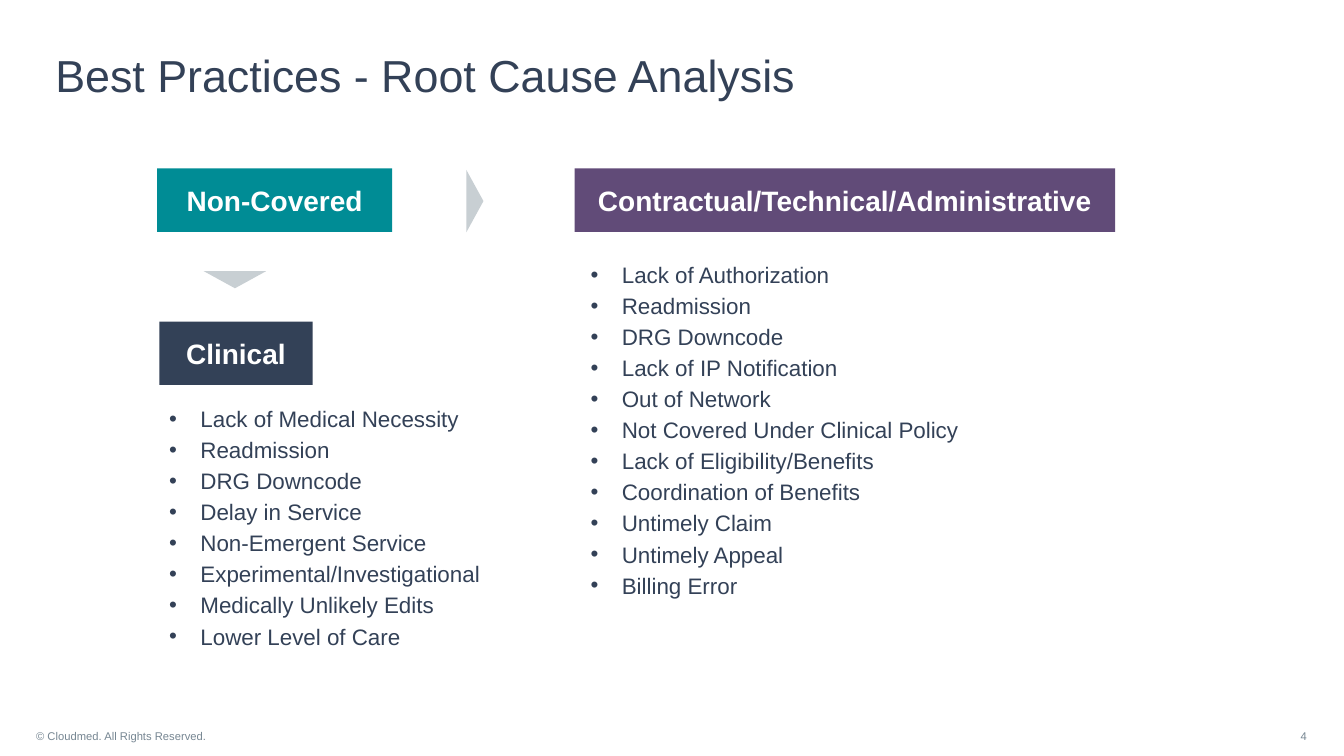
from dataclasses import dataclass

from lxml import etree
from pptx import Presentation
from pptx.dml.color import RGBColor
from pptx.enum.shapes import MSO_SHAPE
from pptx.enum.text import MSO_ANCHOR, PP_ALIGN
from pptx.oxml.ns import qn
from pptx.util import Inches, Pt

RECT, WEDGE = MSO_SHAPE.RECTANGLE, MSO_SHAPE.ISOSCELES_TRIANGLE
TOP, MIDDLE = MSO_ANCHOR.TOP, MSO_ANCHOR.MIDDLE
LEFT, CENTER, RIGHT = PP_ALIGN.LEFT, PP_ALIGN.CENTER, PP_ALIGN.RIGHT


@dataclass(frozen=True)
class Theme:
    font: str = "Arial"
    navy: str = "334157"
    teal: str = "008C95"
    plum: str = "614B78"
    pale: str = "C8CFD3"
    gray: str = "768692"
    white: str = "FFFFFF"
    title: int = 32
    head: int = 20
    body: int = 16
    small: int = 8


class Board:
    """Draws styled elements on one slide."""

    def __init__(self, slide, theme):
        self.slide = slide
        self.theme = theme

    def style(self, para, size, color, bold=False):
        for run in para.runs:
            font = run.font
            font.name = self.theme.font
            font.size = Pt(size)
            font.bold = bold
            font.color.rgb = RGBColor.from_string(color)

    def shape(self, kind, place, fill, turn=0):
        shape = self.slide.shapes.add_shape(kind, *map(Inches, place))
        shape.shadow.inherit = False
        shape.fill.solid()
        shape.fill.fore_color.rgb = RGBColor.from_string(fill)
        shape.line.fill.background()
        shape.rotation = turn
        return shape

    def header(self, text, place, fill):
        frame = self.shape(RECT, place, fill).text_frame
        frame.text = text
        frame.word_wrap = False
        frame.vertical_anchor = MIDDLE
        para = frame.paragraphs[0]
        para.alignment = CENTER
        self.style(para, self.theme.head, self.theme.white, True)

    def text(self, text, place, size, color, align=LEFT, anchor=TOP):
        frame = self.slide.shapes.add_textbox(*map(Inches, place)).text_frame
        frame.word_wrap = True
        frame.vertical_anchor = anchor
        frame.text = text
        for para in frame.paragraphs:
            para.alignment = align
            self.style(para, size, color)
        return frame

    def title(self, text, place):
        frame = self.text(text, place, self.theme.title, self.theme.navy)
        frame.paragraphs[0].line_spacing = 0.9

    def footer(self, text, place, align=LEFT):
        self.text(text, place, self.theme.small, self.theme.gray, align, MIDDLE)

    def bullets(self, items, place):
        theme = self.theme
        frame = self.text("\n".join(items), place, theme.body, theme.navy)
        for para in frame.paragraphs:
            props = para._p.get_or_add_pPr()
            props.set("marL", str(Inches(0.31)))
            props.set("indent", str(Inches(-0.31)))
            tint = etree.SubElement(props, qn("a:buClr"))
            etree.SubElement(tint, qn("a:srgbClr"), val=theme.navy)
            etree.SubElement(props, qn("a:buFont"), typeface=theme.font)
            etree.SubElement(props, qn("a:buChar"), char="•")
            para.space_after = Pt(3)


def main():
    deck = Presentation()
    deck.slide_width, deck.slide_height = Inches(13.33), Inches(7.5)
    theme = Theme()
    board = Board(deck.slides.add_slide(deck.slide_layouts[6]), theme)

    board.title("Best Practices - Root Cause Analysis", (0.45, 0.48, 9.77, 0.62))

    for text, left, top, width, fill in (
        ("Non-Covered", 1.56, 1.67, 2.33, theme.teal),
        ("Clinical", 1.58, 3.19, 1.52, theme.navy),
        ("Contractual/Technical/Administrative", 5.7, 1.67, 5.36, theme.plum),
    ):
        board.header(text, (left, top, width, 0.63), fill)

    for left, top, turn in ((4.4, 1.91, 90), (2.02, 2.69, 180)):
        board.shape(WEDGE, (left, top, 0.62, 0.17), theme.pale, turn)

    board.bullets((
        "Lack of Medical Necessity",
        "Readmission",
        "DRG Downcode",
        "Delay in Service",
        "Non-Emergent Service",
        "Experimental/Investigational",
        "Medically Unlikely Edits",
        "Lower Level of Care",
    ), (1.58, 3.97, 3.69, 2.55))
    board.bullets((
        "Lack of Authorization",
        "Readmission",
        "DRG Downcode",
        "Lack of IP Notification",
        "Out of Network",
        "Not Covered Under Clinical Policy",
        "Lack of Eligibility/Benefits",
        "Coordination of Benefits",
        "Untimely Claim",
        "Untimely Appeal",
        "Billing Error",
    ), (5.76, 2.54, 4.46, 3.52))

    board.footer("© Cloudmed. All Rights Reserved.", (0.26, 7.1, 2.59, 0.4))
    board.footer("4", (12.42, 7.1, 0.64, 0.4), RIGHT)
    deck.save("out.pptx")


if __name__ == "__main__":
    main()
